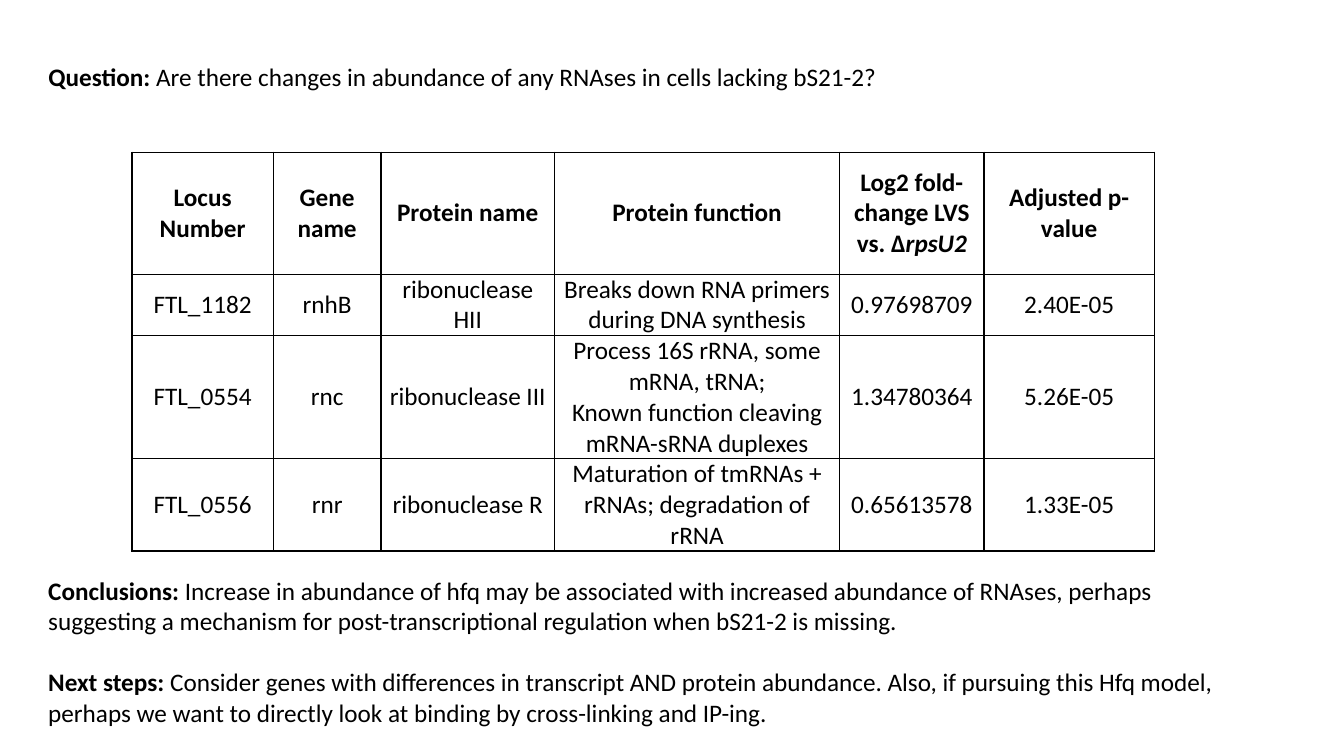
from lxml import etree
from pptx import Presentation, util as u
from pptx.dml.color import RGBColor
from pptx.enum import shapes, text
from pptx.oxml.ns import qn

BLACK = RGBColor(0x00, 0x00, 0x00)
WHITE = RGBColor(0xFF, 0xFF, 0xFF)
FONT = {"name": "Calibri", "size": u.Pt(18), "bold": False, "italic": False}
LINE_GAP = u.Pt(22)

QUESTION = ("Question: ", "Are there changes in abundance of any RNAses in cells lacking bS21-2?")
NOTES = [
    ("Conclusions: ", "Increase in abundance of hfq may be associated with increased abundance of "
     "RNAses, perhaps suggesting a mechanism for post-transcriptional regulation when bS21-2 is missing."),
    ("Next steps: ", "Consider genes with differences in transcript AND protein abundance. Also, if "
     "pursuing this Hfq model, perhaps we want to directly look at binding by cross-linking and IP-ing."),
]
HEADERS = ["Locus Number", "Gene name", "Protein name", "Protein function",
           "Log2 fold-change LVS vs. Δ", "Adjusted p-value"]
ITALIC_TAILS = {"Log2 fold-change LVS vs. Δ": "rpsU2"}
GENES = [
    ["FTL_1182", "rnhB", "ribonuclease HII",
     "Breaks down RNA primers during DNA synthesis", "0.97698709", "2.40E-05"],
    ["FTL_0554", "rnc", "ribonuclease III",
     "Process 16S rRNA, some mRNA, tRNA;\nKnown function cleaving mRNA-sRNA duplexes",
     "1.34780364", "5.26E-05"],
    ["FTL_0556", "rnr", "ribonuclease R",
     "Maturation of tmRNAs + rRNAs; degradation of rRNA", "0.65613578", "1.33E-05"],
]
COL_WIDTHS = [1.4, 1.07, 1.72, 2.83, 1.43, 1.69]
ROW_HEIGHTS = [1.21, 0.6, 1.2, 0.9]


def set_attrs(obj, values):
    for name, value in values.items():
        setattr(obj, name, value)


def add_run(p, words, **changes):
    r = p.add_run()
    r.text = words
    set_attrs(r.font, {**FONT, **changes})
    r.font.color.rgb = BLACK


def add_labelled(p, label, words, space_before=0):
    set_attrs(p, {"alignment": text.PP_ALIGN.LEFT, "line_spacing": 1.0,
                  "space_before": space_before})
    add_run(p, label, bold=True)
    add_run(p, words)


def format_frame(tf):
    set_attrs(tf, {"word_wrap": True, "auto_size": text.MSO_AUTO_SIZE.NONE,
                   "vertical_anchor": text.MSO_ANCHOR.TOP,
                   "margin_left": u.Inches(0.1), "margin_right": u.Inches(0.1),
                   "margin_top": u.Inches(0.05), "margin_bottom": u.Inches(0.05)})


def add_question(s, box):
    sp = s.shapes.title
    set_attrs(sp, dict(zip(("left", "top", "width", "height"), map(u.Inches, box))))
    format_frame(sp.text_frame)
    add_labelled(sp.text_frame.paragraphs[0], *QUESTION)


def add_borders(cell):
    tc_pr = cell._tc.get_or_add_tcPr()
    for side in ("a:lnL", "a:lnR", "a:lnT", "a:lnB"):
        ln = etree.SubElement(tc_pr, qn(side), w=str(u.Pt(1)))
        fill = etree.SubElement(ln, qn("a:solidFill"))
        etree.SubElement(fill, qn("a:srgbClr"), val=str(BLACK))


def fill_cell(cell, words, bold):
    set_attrs(cell, {"vertical_anchor": text.MSO_ANCHOR.MIDDLE,
                     "margin_left": u.Inches(0.07), "margin_right": u.Inches(0.07),
                     "margin_top": 0, "margin_bottom": 0})
    add_borders(cell)
    cell.fill.background()
    tf = cell.text_frame
    for i, line in enumerate(words.split("\n")):
        p = tf.add_paragraph() if i else tf.paragraphs[0]
        p.alignment = text.PP_ALIGN.CENTER
        add_run(p, line, bold=bold)
        if line in ITALIC_TAILS:
            add_run(p, ITALIC_TAILS[line], bold=bold, italic=True)


def add_gene_table(s, box):
    rows = [HEADERS] + GENES
    tbl = s.shapes.add_table(len(rows), len(HEADERS), *map(u.Inches, box)).table
    set_attrs(tbl, {"first_row": False, "horz_banding": False})
    for col, width in zip(tbl.columns, COL_WIDTHS):
        col.width = u.Inches(width)
    for row, height, words in zip(tbl.rows, ROW_HEIGHTS, rows):
        row.height = u.Inches(height)
        for cell, entry in zip(row.cells, words):
            fill_cell(cell, entry, bold=words is HEADERS)


def add_notes_panel(s, box):
    sp = s.shapes.add_shape(shapes.MSO_SHAPE.RECTANGLE, *map(u.Inches, box))
    sp.shadow.inherit = False
    sp.fill.solid()
    sp.fill.fore_color.rgb = WHITE
    sp.line.fill.background()
    tf = sp.text_frame
    format_frame(tf)
    for i, (label, words) in enumerate(NOTES):
        p = tf.add_paragraph() if i else tf.paragraphs[0]
        add_labelled(p, label, words, LINE_GAP if i else 0)


def main():
    prs = Presentation()
    prs.slide_width, prs.slide_height = u.Inches(13.33), u.Inches(7.5)
    s = prs.slides.add_slide(prs.slide_layouts[5])
    # Question above the table
    add_question(s, (0.38, 0.56, 12.95, 0.71))
    # Ribonuclease results
    add_gene_table(s, (1.31, 1.51, sum(COL_WIDTHS), sum(ROW_HEIGHTS)))
    # Conclusions and next steps
    add_notes_panel(s, (0.38, 5.66, 12.23, 1.62))
    prs.save("out.pptx")


if __name__ == "__main__":
    main()
